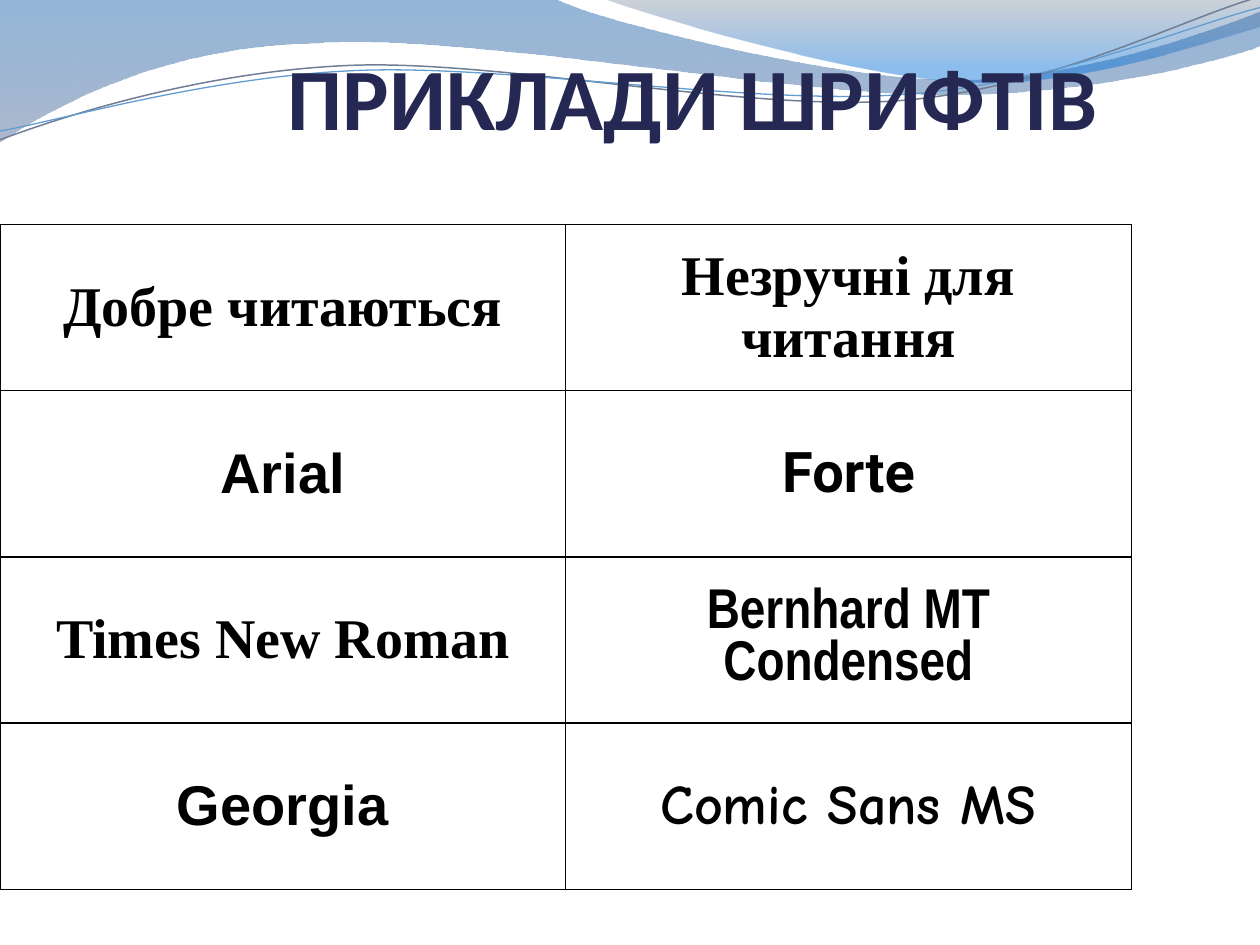
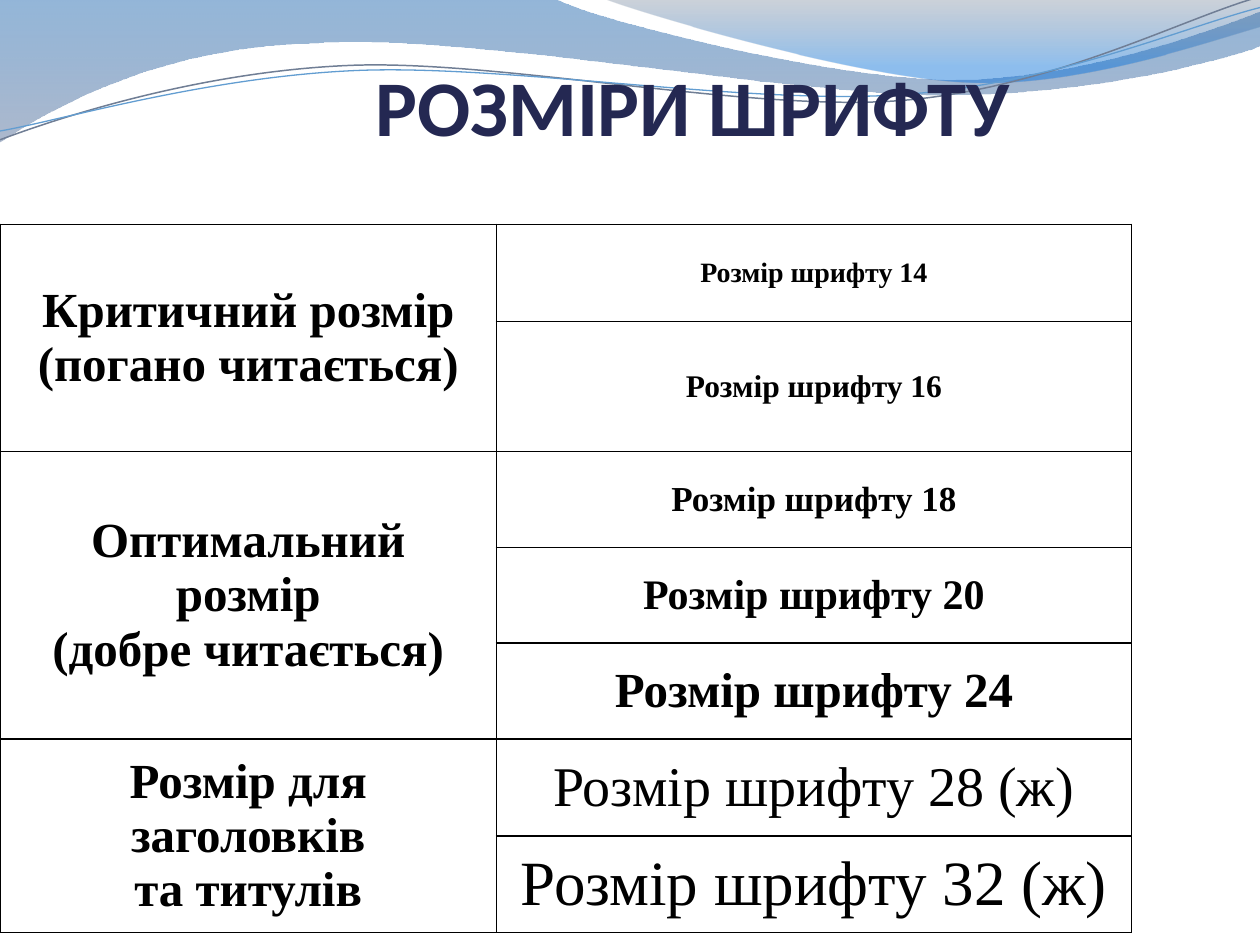
from lxml import etree
from pptx import Presentation
from pptx.dml.color import RGBColor
from pptx.enum.text import MSO_ANCHOR, PP_ALIGN
from pptx.oxml import parse_xml
from pptx.oxml.ns import nsdecls, qn
from pptx.util import Inches, Pt

MIDDLE = MSO_ANCHOR.MIDDLE
CENTER = PP_ALIGN.CENTER
BLACK = RGBColor(0x00, 0x00, 0x00)
NAVY = RGBColor(0x24, 0x28, 0x52)
BLUE = RGBColor(0x12, 0x5E, 0xAA)
STEEL = RGBColor(0x69, 0x7F, 0xA4)
SLATE = RGBColor(0x59, 0x69, 0x82)
AZURE = RGBColor(0x06, 0x70, 0xDA)
GREY = RGBColor(0x70, 0x7E, 0x95)
SKY = RGBColor(0x62, 0x9D, 0xD1)
SERIF = "Times New Roman"
WIDTH, HEIGHT = 10, 7.5
TABLE_TOP, TABLE_WIDTH = 1.78, 8.98

# Outlines in hundredths of an inch: a start point, then lines (2 numbers)
# or Bezier curves (6 numbers). Bands add gradient stops: position, colour,
# opacity in percent.
BANDS = [
    ([(0, 0), (440, -1), (476, 17, 664, 63, 758, 63), (853, 63, 958, 26, 1000, 9),
      (1001, 36), (983, 44, 870, 76, 746, 75), (622, 75, 382, 28, 257, 34),
      (129, 36, 46, 83, -1, 113)],
     [(0, BLUE, 45), (1, STEEL, 55)]),
    ([(479, -1), (509, 11, 682, 62, 769, 65), (856, 69, 961, 32, 1000, 21), (1000, 0)],
     [(0, SLATE, 30), (0.8, AZURE, 45)]),
]
WAVES = [
    ([(0, 111), (48, 93, 158, 57, 277, 52), (395, 47, 593, 89, 713, 80),
      (833, 71, 938, 15, 998, -2)], GREY, 0.85),
    ([(0, 104), (47, 96, 164, 61, 283, 56), (403, 51, 597, 84, 717, 75),
      (836, 67, 941, 21, 1000, 6)], SKY, 0.75),
]

# Cells: row, column, rows spanned, text, size, font, bold
FONTS = [
    [("Добре читаються", SERIF), ("Незручні для читання", SERIF)],
    [("Arial", "Arial"), ("Forte", "Roboto")],
    [("Times New Roman", SERIF), ("Bernhard MT Condensed", "Arial Narrow")],
    [("Georgia", "Arial"), ("Comic Sans MS", "Comic Neue")],
]
FONT_CELLS = [(row, col, 1, text, 32, face, True)
              for row, pair in enumerate(FONTS)
              for col, (text, face) in enumerate(pair)]

GROUPS = [
    (0, 2, "Критичний розмір\n(погано читається)"),
    (2, 3, "Оптимальний розмір\n(добре читається)"),
    (5, 2, "Розмір для заголовків\nта титулів"),
]
SIZES = [("14", 16), ("16", 18), ("18", 20), ("20", 24), ("24", 28),
         ("28 (ж)", 32), ("32 (ж)", 36)]
SIZE_CELLS = [(row, 0, span, text, 28, SERIF, True) for row, span, text in GROUPS]
SIZE_CELLS += [(row, 1, 1, f"Розмір шрифту {label}", size, SERIF, size < 32)
               for row, (label, size) in enumerate(SIZES)]

# Pages: title, title size, title top, title height, column widths, row heights, cells
PAGES = [
    ("ПРИКЛАДИ ШРИФТІВ", 50, 0.28, 0.95, [TABLE_WIDTH / 2] * 2, [1.32] * 4, FONT_CELLS),
    ("РОЗМІРИ ШРИФТУ", 45, 0.44, 0.79, [3.94, TABLE_WIDTH - 3.94],
     [0.77, 0.77, 0.76, 0.76, 0.76, 0.77, 0.77], SIZE_CELLS),
]


def trace(slide, outline, close):
    """Draw an outline as a freeform, bending its lines into Bezier curves."""
    ends = [part[-2:] for part in outline]
    pen = slide.shapes.build_freeform(*ends[0], scale=Inches(0.01))
    pen.add_line_segments(ends[1:], close=close)
    shape = pen.convert_to_shape()
    shape.shadow.inherit = False
    left, top = (min(axis) for axis in zip(*ends))
    lines = list(shape.element.spPr.iter(qn("a:lnTo")))
    for line, part in zip(lines, outline[1:]):
        if len(part) == 6:
            line.tag = qn("a:cubicBezTo")
            line.remove(line[0])
            for x, y in zip(part[::2], part[1::2]):
                etree.SubElement(line, qn("a:pt"), x=str(x - left), y=str(y - top))
    return shape


def style(frame, size, face, color, bold):
    for para in frame.paragraphs:
        para.alignment = CENTER
        for run in para.runs:
            run.font.size = Pt(size)
            run.font.name = face
            run.font.bold = bold
            run.font.color.rgb = color


deck = Presentation()
deck.slide_width, deck.slide_height = Inches(WIDTH), Inches(HEIGHT)

for title, size, top, height, cols, rows, cells in PAGES:
    slide = deck.slides.add_slide(deck.slide_layouts[6])

    for outline, stops in BANDS:
        band = trace(slide, outline, True)
        band.line.fill.background()
        band.fill.gradient()
        band.fill.gradient_angle = 270
        for stop, (place, color, _) in zip(band.fill.gradient_stops, stops):
            stop.position = place
            stop.color.rgb = color
        tints = band.element.spPr.iter(qn("a:srgbClr"))
        for tint, (_, _, alpha) in zip(tints, stops):
            tint.append(parse_xml(f'<a:alpha {nsdecls("a")} val="{alpha * 1000}"/>'))

    for outline, color, width in WAVES:
        wave = trace(slide, outline, False)
        wave.fill.background()
        wave.line.color.rgb = color
        wave.line.width = Pt(width)

    box = slide.shapes.add_textbox(Inches(1), Inches(top), Inches(WIDTH - 1), Inches(height))
    frame = box.text_frame
    frame.word_wrap = True
    frame.vertical_anchor = MIDDLE
    frame.text = title
    style(frame, size, "Calibri", NAVY, True)

    table = slide.shapes.add_table(len(rows), len(cols), 0, Inches(TABLE_TOP),
                                   Inches(TABLE_WIDTH), Inches(sum(rows))).table
    table.first_row = table.horz_banding = False
    for col, width in zip(table.columns, cols):
        col.width = Inches(width)
    for row, tall in zip(table.rows, rows):
        row.height = Inches(tall)

    for cell in table.iter_cells():
        edges = cell._tc.get_or_add_tcPr()
        for side in ("lnL", "lnR", "lnT", "lnB"):
            edges.append(parse_xml(
                f'<a:{side} {nsdecls("a")} w="{Pt(1)}"><a:solidFill>'
                f'<a:srgbClr val="{BLACK}"/></a:solidFill></a:{side}>'))
        cell.fill.background()

    for row, col, span, text, size, face, bold in cells:
        cell = table.cell(row, col)
        if span > 1:
            cell.merge(table.cell(row + span - 1, col))
        cell.vertical_anchor = MIDDLE
        cell.text_frame.text = text
        style(cell.text_frame, size, face, BLACK, bold)

deck.save("out.pptx")
